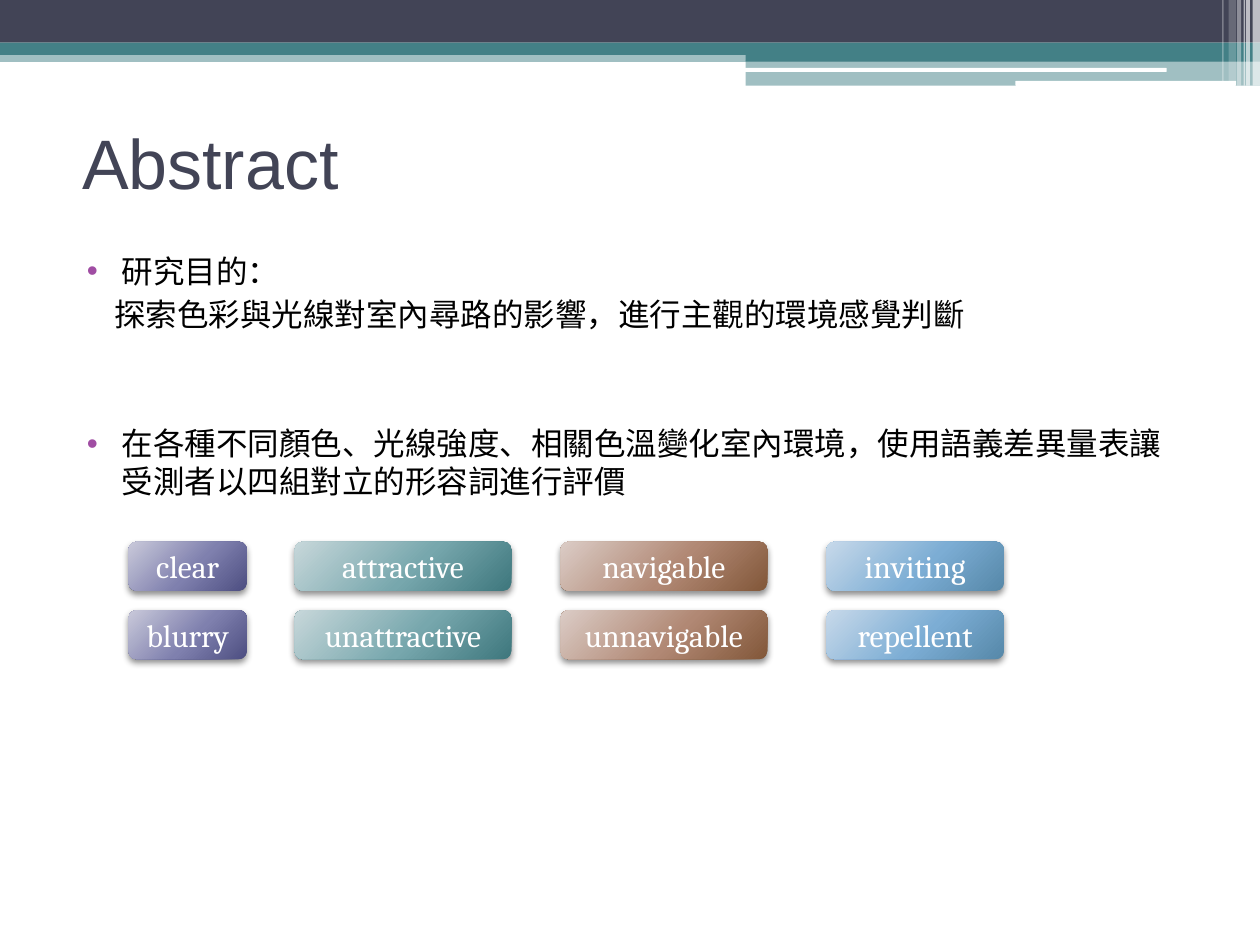
from lxml.etree import SubElement
from pptx import Presentation
from pptx.dml.color import RGBColor
from pptx.enum.shapes import MSO_SHAPE
from pptx.enum.text import MSO_ANCHOR, PP_ALIGN
from pptx.oxml import parse_xml
from pptx.oxml.ns import qn
from pptx.util import Cm, Pt

NS = 'xmlns:a="http://schemas.openxmlformats.org/drawingml/2006/main"'
COLORS = {"navy": "424456", "teal": "438086", "white": "FFFFFF",
          "black": "000000", "bullet": "A04DA3"}

# Header bands and stripes: left, top, width, height (cm), colour, opacity %
BANDS = [
    (0, 1.02, 25.4, 0.23, "teal", 50),
    (0, 0, 25.4, 0.86, "navy", 100),
    (0, 0.86, 25.4, 0.25, "teal", 100),
    (15.03, 0.99, 10.37, 0.25, "teal", 100),
    (15.03, 1.22, 10.37, 0.51, "teal", 50),
]
BARS = [
    (15.01, 1.37, 8.51, 0.08, "white", 100),
    (20.47, 1.63, 4.45, 0.1, "white", 100),
]
STRIPES = [  # left, width, height, opacity %
    (25.25, 0.15, 1.73, 65), (25.12, 0.08, 1.73, 65),
    (25.07, 0.03, 1.73, 60), (24.94, 0.08, 1.73, 40),
    (24.77, 0.15, 1.63, 20), (24.64, 0.03, 1.63, 30),
]

TITLE = "Abstract"
# Text, bulleted, space before (pt)
BODY = [
    ("研究目的：", True, 3),
    ("探索色彩與光線對室內尋路的影響，進行主觀的環境感覺判斷", False, 3),
    ("在各種不同顏色、光線強度、相關色溫變化室內環境，"
     "使用語義差異量表讓受測者以四組對立的形容詞進行評價", True, 52.5),
]

# Opposite words, left, width (cm), gradient colours
PAIRS = [
    (("clear", "blurry"), 2.59, 2.39, ("C9C9DA", "7F80AE", "4D4E81")),
    (("attractive", "unattractive"), 5.94, 4.37, ("C7D7DA", "77A7AD", "3E777D")),
    (("navigable", "unnavigable"), 11.3, 4.17, ("DBCCC6", "B18874", "825739")),
    (("inviting", "repellent"), 16.66, 3.58, ("C7D9EA", "7CADD4", "5688A9")),
]
TOP, STEP, HIGH = 10.92, 1.38, 0.99


def style(para, size, font, color):
    for run in para.runs:
        run.font.size = Pt(size)
        run.font.name = font
        run.font.color.rgb = RGBColor.from_string(COLORS[color])
        SubElement(run.font._element, qn("a:ea"), typeface=font)


def block(kind, left, top, width, height):
    shape = slide.shapes.add_shape(kind, Cm(left), Cm(top), Cm(width), Cm(height))
    shape.shadow.inherit = False
    shape.line.fill.background()
    return shape


def band(kind, left, top, width, height, color, alpha):
    shape = block(kind, left, top, width, height)
    shape.fill.solid()
    shape.fill.fore_color.rgb = RGBColor.from_string(COLORS[color])
    if alpha < 100:
        tone = shape.fill._xPr.find(".//" + qn("a:srgbClr"))
        SubElement(tone, qn("a:alpha"), val=str(alpha * 1000))


def glow(shape, tones):
    """Radial gradient fill and a soft shadow below."""
    stops = "".join(f'<a:gs pos="{pos}000"><a:srgbClr val="{tone}"/></a:gs>'
                    for pos, tone in zip((0, 55, 100), tones))
    props = shape._element.spPr
    props.find(qn("a:prstGeom")).addnext(parse_xml(
        f'<a:gradFill {NS} rotWithShape="1"><a:gsLst>{stops}</a:gsLst>'
        '<a:path path="circle"><a:fillToRect l="-40000" t="-90000" '
        'r="140000" b="190000"/></a:path></a:gradFill>'))
    props.find(qn("a:effectLst")).append(parse_xml(
        f'<a:outerShdw {NS} blurRad="{Pt(4)}" dist="{Pt(2)}" dir="5400000" '
        'rotWithShape="0"><a:srgbClr val="000000"><a:alpha val="45000"/>'
        '</a:srgbClr></a:outerShdw>'))


def indent(para, bulleted):
    props = para._p.get_or_add_pPr()
    props.set("marL", str(Cm(1.02 if bulleted else 0.86)))
    props.set("indent", str(Cm(-0.71 if bulleted else 0)))
    if bulleted:
        tint = SubElement(props, qn("a:buClr"))
        SubElement(tint, qn("a:srgbClr"), val=COLORS["bullet"])
        SubElement(props, qn("a:buFont"), typeface="Arial")
        SubElement(props, qn("a:buChar"), char="•")
    else:
        SubElement(props, qn("a:buNone"))


deck = Presentation()
deck.slide_width, deck.slide_height = Cm(25.4), Cm(19.05)
slide = deck.slides.add_slide(deck.slide_layouts[5])

# Header
for row in BANDS:
    band(MSO_SHAPE.RECTANGLE, *row)
for row in BARS:
    band(MSO_SHAPE.ROUNDED_RECTANGLE, *row)
for left, width, height, alpha in STRIPES:
    band(MSO_SHAPE.RECTANGLE, left, 0, width, height, "white", alpha)

# Title
title = slide.shapes.title
title.left, title.top, title.width, title.height = Cm(1.4), Cm(1.78), Cm(22.86), Cm(2.97)
title.text_frame.text = TITLE
title.text_frame.vertical_anchor = MSO_ANCHOR.MIDDLE
title.text_frame.paragraphs[0].alignment = PP_ALIGN.LEFT
style(title.text_frame.paragraphs[0], 40, "Arial", "navy")

# Body text
frame = slide.shapes.add_textbox(Cm(1.19), Cm(4.95), Cm(22.86), Cm(12.01)).text_frame
frame.word_wrap = True
frame.text = "\n".join(text for text, _, _ in BODY)
for para, (_, bulleted, gap) in zip(frame.paragraphs, BODY):
    para.space_before = Pt(gap)
    indent(para, bulleted)
    style(para, 18, "Noto Sans CJK SC", "black")

# Word pairs
for words, left, width, tones in PAIRS:
    for row, word in enumerate(words):
        shape = block(MSO_SHAPE.ROUNDED_RECTANGLE, left, TOP + row * STEP, width, HIGH)
        glow(shape, tones)
        shape.text_frame.text = word
        shape.text_frame.word_wrap = False
        shape.text_frame.vertical_anchor = MSO_ANCHOR.MIDDLE
        shape.text_frame.paragraphs[0].alignment = PP_ALIGN.CENTER
        style(shape.text_frame.paragraphs[0], 18, "Cambria", "white")

deck.save("out.pptx")
